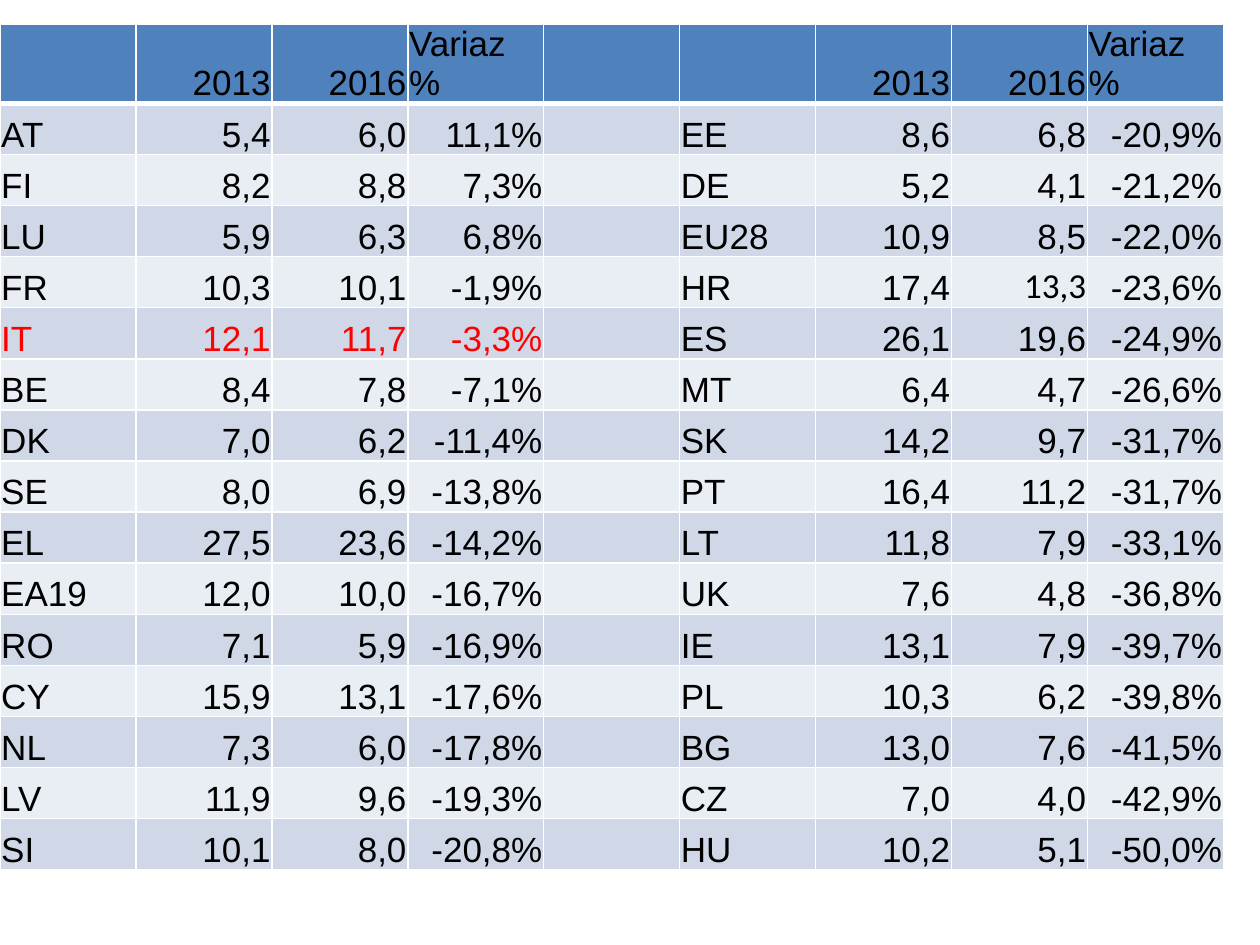
"""Build a slide with a two-part table of country rates in 2013 and 2016."""
from lxml import etree
from pptx import Presentation
from pptx.dml.color import RGBColor
from pptx.enum import text
from pptx.oxml import ns
from pptx.util import Inches, Pt

HEADER = RGBColor(0x4F, 0x81, 0xBD)
BANDS = [RGBColor(0xE9, 0xED, 0xF4), RGBColor(0xD0, 0xD8, 0xE8)]
BLACK = RGBColor(0, 0, 0)
RED = RGBColor(0xFF, 0, 0)

ROWS = [
    ["", "2013", "2016", "Variaz %", "", "", "2013", "2016", "Variaz %"],
    ["AT", "5,4", "6,0", "11,1%", "", "EE", "8,6", "6,8", "-20,9%"],
    ["FI", "8,2", "8,8", "7,3%", "", "DE", "5,2", "4,1", "-21,2%"],
    ["LU", "5,9", "6,3", "6,8%", "", "EU28", "10,9", "8,5", "-22,0%"],
    ["FR", "10,3", "10,1", "-1,9%", "", "HR", "17,4", "13,3", "-23,6%"],
    ["IT", "12,1", "11,7", "-3,3%", "", "ES", "26,1", "19,6", "-24,9%"],
    ["BE", "8,4", "7,8", "-7,1%", "", "MT", "6,4", "4,7", "-26,6%"],
    ["DK", "7,0", "6,2", "-11,4%", "", "SK", "14,2", "9,7", "-31,7%"],
    ["SE", "8,0", "6,9", "-13,8%", "", "PT", "16,4", "11,2", "-31,7%"],
    ["EL", "27,5", "23,6", "-14,2%", "", "LT", "11,8", "7,9", "-33,1%"],
    ["EA19", "12,0", "10,0", "-16,7%", "", "UK", "7,6", "4,8", "-36,8%"],
    ["RO", "7,1", "5,9", "-16,9%", "", "IE", "13,1", "7,9", "-39,7%"],
    ["CY", "15,9", "13,1", "-17,6%", "", "PL", "10,3", "6,2", "-39,8%"],
    ["NL", "7,3", "6,0", "-17,8%", "", "BG", "13,0", "7,6", "-41,5%"],
    ["LV", "11,9", "9,6", "-19,3%", "", "CZ", "7,0", "4,0", "-42,9%"],
    ["SI", "10,1", "8,0", "-20,8%", "", "HU", "10,2", "5,1", "-50,0%"],
]


def add_border(cell, side, width):
    properties = cell._tc.get_or_add_tcPr()
    line = etree.SubElement(properties, ns.qn(f"a:ln{side}"), w=str(Pt(width)))
    fill = etree.SubElement(line, ns.qn("a:solidFill"))
    etree.SubElement(fill, ns.qn("a:srgbClr"), val="FFFFFF")


deck = Presentation()
deck.slide_width, deck.slide_height = Inches(10), Inches(7.5)
page = deck.slides.add_slide(deck.slide_layouts[6])
table = page.shapes.add_table(
    len(ROWS), len(ROWS[0]), Inches(0), Inches(0.19), Inches(9.71), Inches(6.49)
).table

for row, values in enumerate(ROWS):
    for column, value in enumerate(values):
        cell = table.cell(row, column)
        cell.margin_left = cell.margin_right = cell.margin_top = Inches(0.01)
        cell.margin_bottom = Inches(0)
        cell.vertical_anchor = text.MSO_ANCHOR.BOTTOM
        for side in "LRTB":
            under_header = (row, side) in [(0, "B"), (1, "T")]
            add_border(cell, side, 3 if under_header else 1)
        cell.fill.solid()
        cell.fill.fore_color.rgb = BANDS[row % 2] if row else HEADER
        if not value:
            continue
        para = cell.text_frame.paragraphs[0]
        if column not in (0, 5) and value != "Variaz %":
            para.alignment = text.PP_ALIGN.RIGHT
        span = para.add_run()
        span.text = value
        span.font.size = Pt(20)
        span.font.bold = False
        span.font.name = "Calibri" if values[5] == "HR" and column == 7 else "Arial"
        span.font.color.rgb = RED if values[0] == "IT" and column < 4 else BLACK

deck.save("out.pptx")
